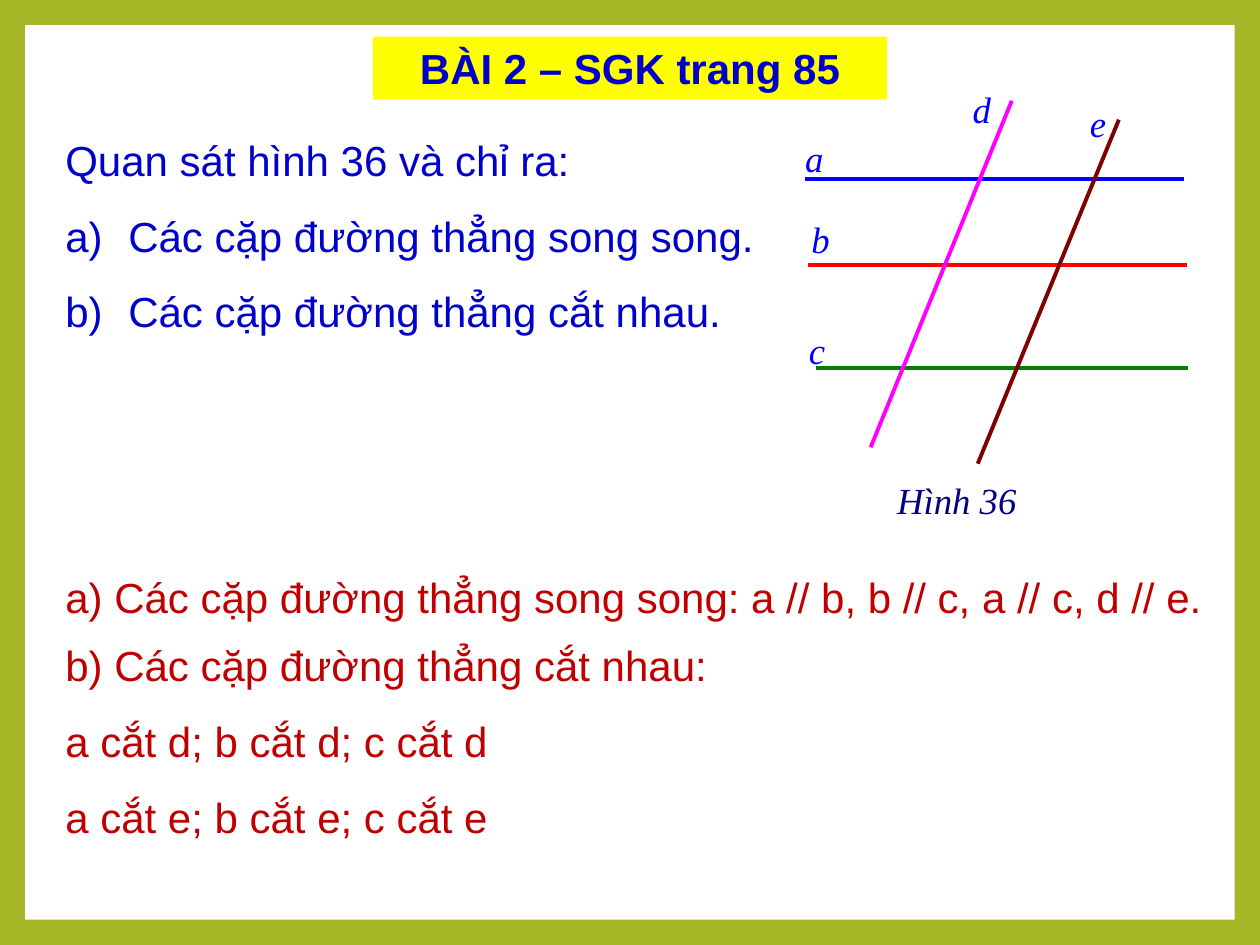
import pptx
import pptx.util
import pptx.dml.color
import pptx.enum.shapes
import pptx.enum.text
import lxml.etree
from dataclasses import dataclass
from pptx.util import Inches


@dataclass(frozen=True)
class Theme:
    sans: str = "Arial"
    serif: str = "Times New Roman"
    body: float = 24
    label: float = 21
    stroke: float = 2.25
    frame: str = "A6B727"
    page: str = "FFFFFF"
    band: str = "FFFF00"
    ask: str = "0000CC"
    reply: str = "C00000"
    mark: str = "0000FF"
    note: str = "000080"


THEME = Theme()
NS = "http://schemas.openxmlformats.org/drawingml/2006/main"

LINES = [
    ("a", "0000FF", (0, 0.73), (3.01, 0.73), (0, 0.39, 0.27)),
    ("b", "FF0000", (0.02, 1.41), (3.03, 1.41), (0.05, 1.03, 0.27)),
    ("c", "008000", (0.09, 2.23), (3.04, 2.23), (0.03, 1.91, 0.25)),
    ("d", "FF00FF", (1.64, 0.11), (0.52, 2.86), (1.33, 0, 0.27)),
    ("e", "800000", (2.49, 0.26), (1.37, 2.99), (2.26, 0.11, 0.25)),
]


def rgb(code):
    return pptx.dml.color.RGBColor.from_string(code)


def style(para, face, size, color, bold=False, italic=False):
    font = para.font
    font.name = face
    font.size = pptx.util.Pt(size)
    font.color.rgb = rgb(color)
    font.bold = bold
    font.italic = italic


def number(para):
    props = para._p.get_or_add_pPr()
    props.set("marL", str(Inches(0.5)))
    props.set("indent", str(Inches(-0.5)))
    mark = lxml.etree.SubElement(props, f"{{{NS}}}buAutoNum")
    mark.set("type", "alphaLcParenR")


def add_page(slide, box):
    fill = slide.background.fill
    fill.solid()
    fill.fore_color.rgb = rgb(THEME.frame)
    page = slide.shapes.add_shape(
        pptx.enum.shapes.MSO_SHAPE.RECTANGLE, *map(Inches, box))
    page.shadow.inherit = False
    page.fill.solid()
    page.fill.fore_color.rgb = rgb(THEME.page)
    page.line.fill.background()


def add_title(slide, box, text):
    title = slide.shapes.title
    title.left, title.top, title.width, title.height = map(Inches, box)
    title.fill.solid()
    title.fill.fore_color.rgb = rgb(THEME.band)
    frame = title.text_frame
    frame.text = text
    frame.auto_size = pptx.enum.text.MSO_AUTO_SIZE.NONE
    frame.vertical_anchor = pptx.enum.text.MSO_ANCHOR.MIDDLE
    para = frame.paragraphs[0]
    para.alignment = pptx.enum.text.PP_ALIGN.CENTER
    style(para, THEME.sans, THEME.body, THEME.ask, bold=True)


def add_body(slide, box, rows, color, listed=False):
    frame = slide.shapes.add_textbox(*map(Inches, box)).text_frame
    frame.word_wrap = True
    frame.text = "\n".join(rows)
    for index, para in enumerate(frame.paragraphs):
        if listed and index:
            number(para)
        para.line_spacing = 1.5
        style(para, THEME.sans, THEME.body, color)


def add_label(shapes, box, text, color):
    frame = shapes.add_textbox(*map(Inches, box)).text_frame
    frame.margin_left = frame.margin_right = 0
    frame.margin_top = frame.margin_bottom = 0
    frame.word_wrap = False
    frame.text = text
    style(frame.paragraphs[0], THEME.serif, THEME.label, color, italic=True)


def add_line(shapes, start, end, color):
    line = shapes.add_connector(
        pptx.enum.shapes.MSO_CONNECTOR.STRAIGHT, *map(Inches, start + end))
    line.line.color.rgb = rgb(color)
    line.line.width = pptx.util.Pt(THEME.stroke)
    lxml.etree.SubElement(line._element.spPr, f"{{{NS}}}effectLst")


def add_figure(slide, box):
    left, top, width, height = box
    for name, color, start, end, (x, y, wide) in LINES:
        group = slide.shapes.add_group_shape().shapes
        ends = [(left + px, top + py) for px, py in (start, end)]
        add_line(group, *ends, color)
        add_label(group, (left + x, top + y, wide, 0.4), name, THEME.mark)
    note = (left + 0.73, top + height - 0.4, 1.07, 0.4)
    add_label(slide.shapes, note, "Hình 36", THEME.note)


def main():
    deck = pptx.Presentation()
    deck.slide_width, deck.slide_height = Inches(10), Inches(7.5)
    slide = deck.slides.add_slide(deck.slide_layouts.get_by_name("Title Only"))
    add_page(slide, (0.2, 0.2, 9.6, 7.1))
    title = slide.shapes.title._element
    title.getparent().append(title)
    add_body(slide, (0.42, 0.82, 9.17, 1.84), [
        "Quan sát hình 36 và chỉ ra:",
        "Các cặp đường thẳng song song.",
        "Các cặp đường thẳng cắt nhau.",
    ], THEME.ask, listed=True)
    add_title(slide, (2.96, 0.29, 4.08, 0.5), "BÀI 2 – SGK trang 85")
    add_body(slide, (0.42, 4.29, 9.33, 0.71), [
        "a) Các cặp đường thẳng song song: a // b, b // c, a // c, d // e.",
    ], THEME.reply)
    add_body(slide, (0.42, 4.83, 9.17, 1.84), [
        "b) Các cặp đường thẳng cắt nhau:",
        "a cắt d; b cắt d; c cắt d",
        "a cắt e; b cắt e; c cắt e",
    ], THEME.reply)
    add_figure(slide, (6.39, 0.69, 3.04, 3.5))
    deck.save("out.pptx")


if __name__ == "__main__":
    main()
